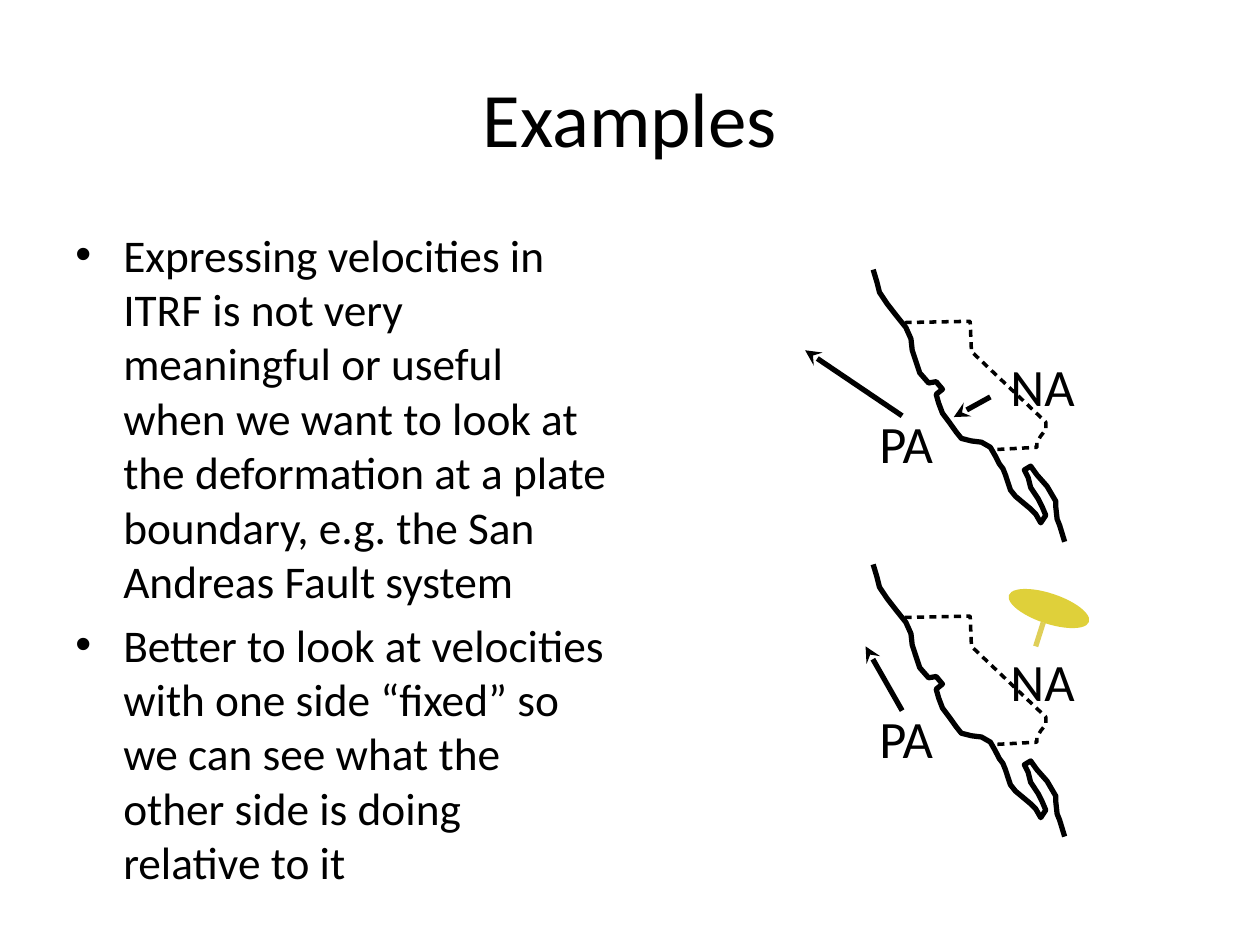
from dataclasses import dataclass

from lxml.etree import SubElement
from pptx import Presentation
from pptx.dml.color import RGBColor
from pptx.enum.shapes import MSO_CONNECTOR, MSO_SHAPE
from pptx.enum.text import MSO_ANCHOR, MSO_AUTO_SIZE, PP_ALIGN
from pptx.oxml.ns import qn
from pptx.util import Inches, Pt


@dataclass(frozen=True)
class Theme:
    font: str = "Calibri"
    ink: str = "000000"
    pin_head: str = "DFD03A"
    pin_needle: str = "DFCF58"
    title_size: float = 44
    body_size: float = 25.9
    label_size: float = 30
    heavy_line: float = 3
    border_line: float = 2


TITLE = "Examples"
BULLETS = [
    "Expressing velocities in ITRF is not very meaningful or useful when we "
    "want to look at the deformation at a plate boundary, e.g. the San "
    "Andreas Fault system",
    "Better to look at velocities with one side “fixed” so we can see what "
    "the other side is doing relative to it",
]
COASTLINE = [
    (6.93, 2.14), (6.96, 2.24), (6.98, 2.32), (7.04, 2.41), (7.11, 2.5),
    (7.19, 2.6), (7.23, 2.69), (7.24, 2.78), (7.27, 2.87), (7.3, 2.96),
    (7.37, 3.04), (7.43, 3.03), (7.48, 3.09), (7.43, 3.13), (7.45, 3.2),
    (7.48, 3.28), (7.54, 3.36), (7.59, 3.43), (7.63, 3.48), (7.71, 3.5),
    (7.79, 3.51), (7.86, 3.55), (7.9, 3.62), (7.93, 3.68), (7.96, 3.72),
    (7.98, 3.77), (8, 3.83), (8.02, 3.89), (8.06, 3.94), (8.12, 3.99),
    (8.18, 4.04), (8.22, 4.08), (8.26, 4.15), (8.3, 4.09), (8.27, 4.02),
    (8.24, 3.96), (8.18, 3.87), (8.16, 3.79), (8.13, 3.73), (8.18, 3.7),
    (8.23, 3.77), (8.31, 3.86), (8.38, 3.98), (8.38, 4.03), (8.39, 4.12),
    (8.41, 4.17), (8.45, 4.3),
]
STATE_BORDER = [
    (7.18, 2.56), (7.7, 2.55), (7.71, 2.79), (8.3, 3.35), (8.3, 3.41),
    (8.26, 3.46), (8.23, 3.51), (8.23, 3.55), (7.86, 3.57),
]
PLATE_LABELS = {"PA": (6.92, 3.2, 0.57, 0.62), "NA": (7.96, 2.75, 0.63, 0.62)}
MAP_STEP = 2.34
ITRF_ARROWS = [((6.39, 2.78), (7.16, 3.3)), ((7.57, 3.31), (7.86, 3.15))]
FIXED_ARROWS = [((6.87, 5.13), (7.16, 5.64))]


def apply_format(target, values):
    for name, value in values.items():
        setattr(target, name, value)


class SlideBuilder:
    def __init__(self, presentation, theme):
        self.theme = theme
        self.slide = presentation.slides.add_slide(presentation.slide_layouts[5])
        self.shapes = self.slide.shapes

    def start_group(self):
        self.shapes = self.slide.shapes.add_group_shape().shapes

    def style_font(self, font, size):
        apply_format(font, {"name": self.theme.font, "size": Pt(size)})
        font.color.rgb = RGBColor.from_string(self.theme.ink)

    def style_line(self, line, color, width):
        line.color.rgb = RGBColor.from_string(color)
        line.width = Pt(width)

    def title(self, text, box):
        shape = self.slide.shapes.title
        places = map(Inches, box)
        apply_format(shape, dict(zip(("left", "top", "width", "height"), places)))
        frame = shape.text_frame
        apply_format(frame, {"text": text, "vertical_anchor": MSO_ANCHOR.MIDDLE})
        paragraph = frame.paragraphs[0]
        paragraph.alignment = PP_ALIGN.CENTER
        self.style_font(paragraph.runs[0].font, self.theme.title_size)

    def bullets(self, texts, box):
        frame = self.shapes.add_textbox(*map(Inches, box)).text_frame
        apply_format(frame, {"word_wrap": True, "text": "\n".join(texts)})
        for paragraph in frame.paragraphs:
            paragraph.space_before = Pt(5.2)
            properties = paragraph._p.get_or_add_pPr()
            properties.set("marL", str(Inches(0.38)))
            properties.set("indent", str(Inches(-0.38)))
            SubElement(properties, qn("a:buFont")).set("typeface", "Arial")
            SubElement(properties, qn("a:buChar")).set("char", "•")
            self.style_font(paragraph.runs[0].font, self.theme.body_size)

    def label(self, text, box):
        frame = self.shapes.add_textbox(*map(Inches, box)).text_frame
        sides = ("left", "top", "right", "bottom")
        apply_format(frame, {f"margin_{side}": Inches(0.06) for side in sides})
        apply_format(frame, {
            "text": text,
            "word_wrap": False,
            "auto_size": MSO_AUTO_SIZE.SHAPE_TO_FIT_TEXT,
            "vertical_anchor": MSO_ANCHOR.MIDDLE,
        })
        self.style_font(frame.paragraphs[0].runs[0].font, self.theme.label_size)

    def outline(self, points, width, dashed=False):
        places = [(Inches(x), Inches(y)) for x, y in points]
        builder = self.shapes.build_freeform(*places[0])
        builder.add_line_segments(places[1:], close=False)
        shape = builder.convert_to_shape()
        shape.shadow.inherit = False
        shape.fill.background()
        self.style_line(shape.line, self.theme.ink, width)
        if dashed:
            dashes = SubElement(shape.line._get_or_add_ln(), qn("a:custDash"))
            SubElement(dashes, qn("a:ds"), {"d": "200000", "sp": "150000"})

    def line(self, start, end, color, arrow=False):
        places = map(Inches, (*start, *end))
        connector = self.shapes.add_connector(MSO_CONNECTOR.STRAIGHT, *places)
        self.style_line(connector.line, color, self.theme.heavy_line)
        SubElement(connector._element.spPr, qn("a:effectLst"))
        if arrow:
            head = SubElement(connector.line._get_or_add_ln(), qn("a:headEnd"))
            head.set("type", "stealth")

    def oval(self, box, color, rotation):
        shape = self.shapes.add_shape(MSO_SHAPE.OVAL, *map(Inches, box))
        shape.shadow.inherit = False
        shape.rotation = rotation
        shape.fill.solid()
        shape.fill.fore_color.rgb = RGBColor.from_string(color)
        shape.line.fill.background()

    def plate_map(self, offset, arrows):
        self.start_group()
        coastline = [(x, y + offset) for x, y in COASTLINE]
        border = [(x, y + offset) for x, y in STATE_BORDER]
        self.outline(coastline, self.theme.heavy_line)
        self.outline(border, self.theme.border_line, dashed=True)
        for tip, tail in arrows:
            self.line(tip, tail, self.theme.ink, arrow=True)
        for text, (left, top, width, height) in PLATE_LABELS.items():
            self.label(text, (left, top + offset, width, height))

    def pin(self):
        self.oval((7.99, 4.71, 0.67, 0.24), self.theme.pin_head, 18.4)
        self.line((8.28, 4.94), (8.22, 5.13), self.theme.pin_needle)


def main():
    presentation = Presentation()
    size = {"slide_width": Inches(10), "slide_height": Inches(7.5)}
    apply_format(presentation, size)
    builder = SlideBuilder(presentation, Theme())
    builder.title(TITLE, (0.5, 0.3, 9, 1.25))
    builder.bullets(BULLETS, (0.5, 1.75, 4.42, 4.95))
    builder.plate_map(0, ITRF_ARROWS)
    builder.plate_map(MAP_STEP, FIXED_ARROWS)
    builder.pin()
    presentation.save("out.pptx")


if __name__ == "__main__":
    main()
